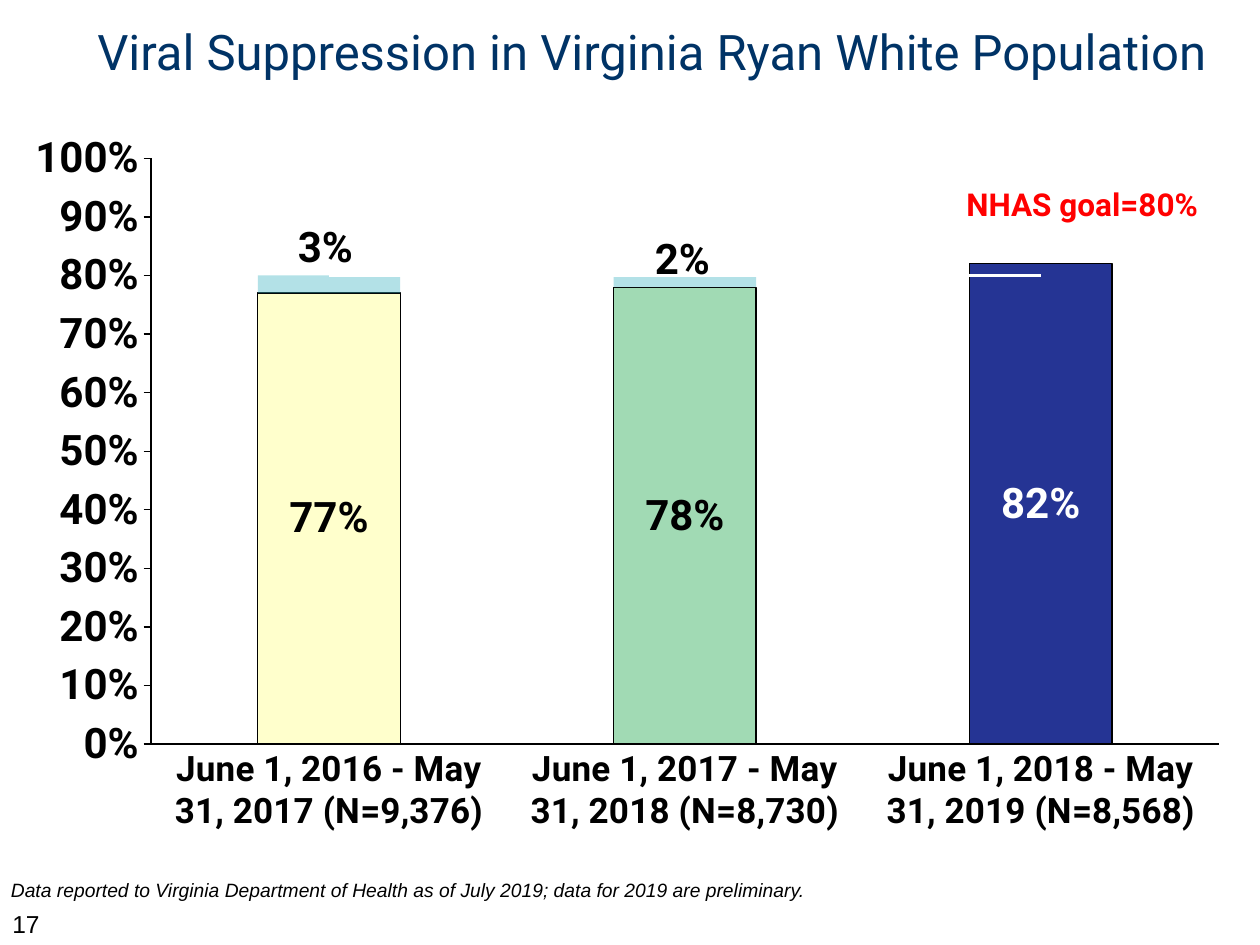
"""Build the viral suppression slide: stacked columns against the NHAS goal line."""
from lxml.etree import SubElement
from pptx import Presentation
from pptx.chart.data import CategoryChartData
from pptx.dml.color import RGBColor
from pptx.enum.chart import XL_CHART_TYPE as ChartType, XL_TICK_MARK as Tick
from pptx.enum.text import MSO_ANCHOR as Anchor, PP_ALIGN as Align
from pptx.oxml import parse_xml
from pptx.oxml.ns import nsdecls, qn
from pptx.util import Cm, Pt

COLORS = {"title": "003366", "goal": "FF0000", "text": "000000", "white": "FFFFFF",
          "gap": "41B6C4", "suppressed": "BBE0E3"}
YEAR_COLORS = ["FFFFCC", "A1DAB4", "253494"]

TEXTS = [
    dict(text="Viral Suppression in Virginia Ryan White Population",
         box=(-0.2, 0.3, 26.67, 1.45), font="Roboto", size=28, color="title",
         align=Align.CENTER, anchor=Anchor.MIDDLE),
    dict(text="NHAS goal=80%", box=(19.23, 3.61, 6.35, 1.02),
         font="Roboto", size=18, color="goal", bold=True),
    dict(text="Data reported to Virginia Department of Health as of July 2019; "
              "data for 2019 are preliminary.",
         box=(-0.03, 17.58, 23.7, 0.74), font="Arial", size=11, color="text", italic=True),
    dict(text="17", box=(0, 18.21, 5.92, 0.64), font="Arial", size=14, color="text"),
]

PERIODS = ["June 1, 2016 - May 31, 2017 (N=9,376)",
           "June 1, 2017 - May 31, 2018 (N=8,730)",
           "June 1, 2018 - May 31, 2019 (N=8,568)"]
SERIES = {"Series 1": (0.77, 0.78, 0.82),
          "Series 2": (0.03, 0.02, None),
          "Series 3": (0.8, 0.8, 0.8)}
GAP_LABEL_SHIFTS = [(-0.003, -0.05), (-0.002, -0.03)]
CHART_BOX = (0, 2.69, 24.97, 14.45)
PLOT_AREA = {"layoutTarget": "inner", "xMode": "edge", "yMode": "edge",
             "x": 0.122, "y": 0.034, "w": 0.862, "h": 0.818}


def rgb(name):
    return RGBColor.from_string(COLORS.get(name, name))


def style(font, size, color, name="Roboto", bold=True, italic=False):
    font.name, font.size, font.bold, font.italic = name, Pt(size), bold, italic
    font.color.rgb = rgb(color)


def outline(line, color, width=0.75):
    line.color.rgb = rgb(color)
    line.width = Pt(width)


def layout(values):
    element = parse_xml(f"<c:layout {nsdecls('c')}/>")
    manual = SubElement(element, qn("c:manualLayout"))
    for tag, value in values.items():
        SubElement(manual, qn(f"c:{tag}")).set("val", str(value))
    return element


def add_text(slide, text, box, font, size, color, bold=False, italic=False,
             align=Align.LEFT, anchor=Anchor.TOP):
    frame = slide.shapes.add_textbox(*map(Cm, box)).text_frame
    frame.word_wrap = True
    frame.vertical_anchor = anchor
    paragraph = frame.paragraphs[0]
    paragraph.text = text
    paragraph.alignment = align
    style(paragraph.font, size, color, font, bold, italic)


def label_series(series):
    labels = series.data_labels
    labels.show_value = True
    labels.number_format, labels.number_format_is_linked = "0%", False
    style(labels.font, 24, "text")


def label_point(series, index, color, shift=None):
    style(series.points[index].data_label.font, 24, color)
    label = series.data_labels._element.findall(qn("c:dLbl"))[-1]
    label.insert(1, parse_xml(
        f'<c:numFmt {nsdecls("c")} formatCode="0%" sourceLinked="0"/>'))
    if shift:
        label.insert(1, layout(dict(zip("xy", shift))))


def move_to_line(bar_plot, goal):
    """Draw the goal series as a line on the axes of the columns."""
    bars, ser = bar_plot._element, goal._element
    line = parse_xml(f'<c:lineChart {nsdecls("c")}><c:grouping val="standard"/>'
                     '<c:varyColors val="0"/></c:lineChart>')
    for invert in ser.findall(qn("c:invertIfNegative")):
        ser.remove(invert)
    ser.find(qn("c:spPr")).addnext(parse_xml(
        f'<c:marker {nsdecls("c")}><c:symbol val="none"/></c:marker>'))
    line.append(ser)
    SubElement(ser, qn("c:smooth")).set("val", "0")
    SubElement(line, qn("c:marker")).set("val", "1")
    for axis in bars.findall(qn("c:axId")):
        SubElement(line, qn("c:axId")).set("val", axis.get("val"))
    bars.addnext(line)


def add_chart(slide):
    data = CategoryChartData(number_format="0%")
    data.categories = PERIODS
    for name, values in SERIES.items():
        data.add_series(name, values)
    chart = slide.shapes.add_chart(
        ChartType.COLUMN_STACKED, *map(Cm, CHART_BOX), data).chart
    chart.has_legend = chart.has_title = False
    style(chart.font, 20, "text")

    plot = chart.plots[0]
    plot.gap_width, plot.overlap, plot.vary_by_categories = 150, 100, False
    area = plot._element.getparent()
    for old in area.findall(qn("c:layout")):
        area.remove(old)
    area.insert(0, layout(PLOT_AREA))

    periods, share = chart.category_axis, chart.value_axis
    for axis, size, tick in ((periods, 20, Tick.NONE), (share, 24, Tick.OUTSIDE)):
        axis.has_major_gridlines = False
        axis.major_tick_mark, axis.minor_tick_mark = tick, Tick.NONE
        outline(axis.format.line, "text")
        style(axis.tick_labels.font, size, "text")
    share.minimum_scale, share.maximum_scale, share.major_unit = 0, 1, 0.1
    share.tick_labels.number_format = "0%"
    share.tick_labels.number_format_is_linked = False

    suppressed, gap, goal = plot.series
    for series, color in ((suppressed, "suppressed"), (gap, "gap")):
        series.format.fill.solid()
        series.format.fill.fore_color.rgb = rgb(color)
        label_series(series)
    outline(suppressed.format.line, "text")
    for index, color in enumerate(YEAR_COLORS):
        point = suppressed.points[index].format
        point.fill.solid()
        point.fill.fore_color.rgb = rgb(color)
        outline(point.line, "text")
    label_point(suppressed, 2, "white")

    gap.format.line.fill.background()
    tint = gap._element.find(qn("c:spPr")).find(qn("a:solidFill"))[0]
    SubElement(tint, qn("a:alpha")).set("val", "40000")
    for index, shift in enumerate(GAP_LABEL_SHIFTS):
        label_point(gap, index, "text", shift)

    outline(goal.format.line, "white", 2.25)
    move_to_line(plot, goal)


def main():
    deck = Presentation()
    deck.slide_width, deck.slide_height = Cm(25.4), Cm(19.05)
    slide = deck.slides.add_slide(deck.slide_layouts[6])
    for item in TEXTS:
        add_text(slide, **item)
    add_chart(slide)
    deck.save("out.pptx")


if __name__ == "__main__":
    main()
